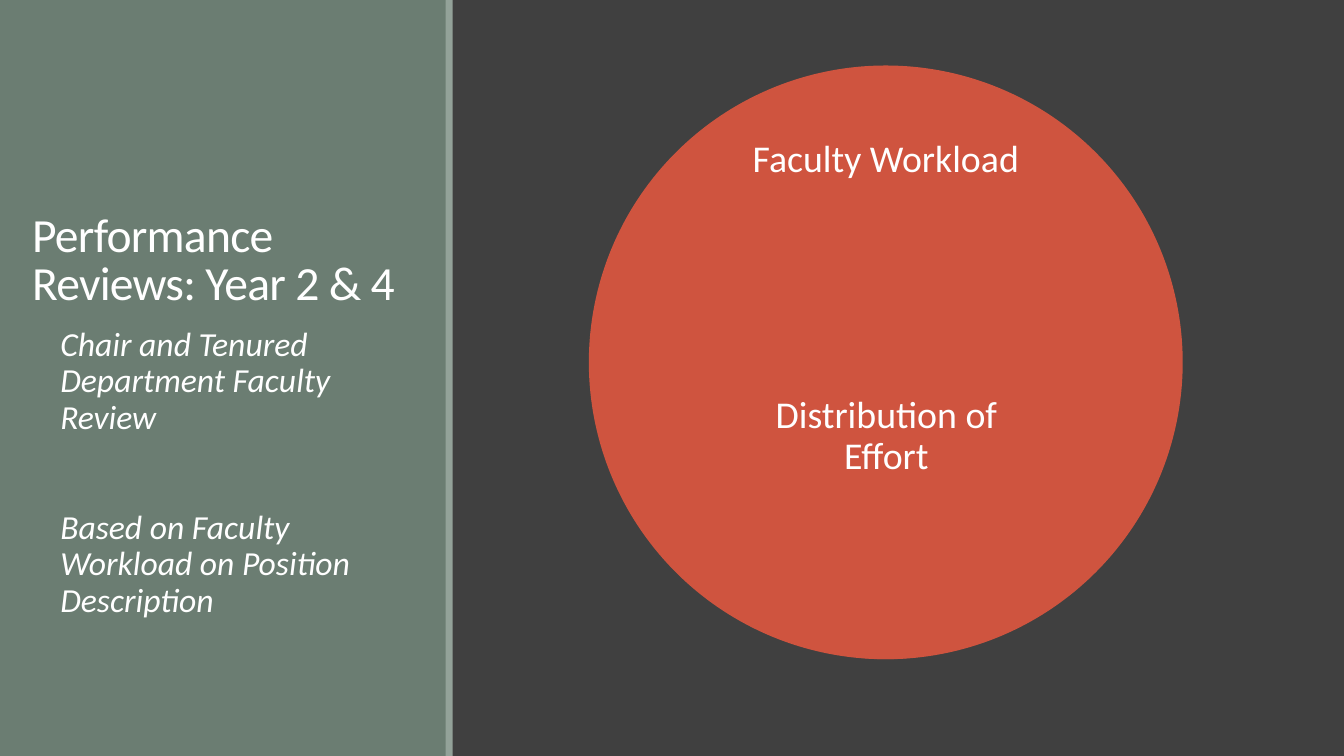
from pptx import Presentation
from pptx.dml.color import RGBColor
from pptx.enum import shapes, text
from pptx.util import Inches, Pt

FONT = "Calibri"
WHITE = "FFFFFF"
CORAL = "CF543F"
SLIDE_WIDTH, SLIDE_HEIGHT = 13.33, 7.5


def color(value):
    return RGBColor.from_string(value)


def add_block(slide, kind, box, fill):
    shape = slide.shapes.add_shape(kind, *map(Inches, box))
    shape.shadow.inherit = False
    shape.fill.solid()
    shape.fill.fore_color.rgb = color(fill)
    shape.line.fill.background()
    return shape


def add_text(slide, box, paragraphs, size, italic=False, align=text.PP_ALIGN.LEFT,
             anchor=text.MSO_ANCHOR.TOP, line_spacing=0.9, gap=0, inset=0.1,
             inset_top=0.05, tracking=0):
    shape = slide.shapes.add_textbox(*map(Inches, box))
    frame = shape.text_frame
    frame.word_wrap = True
    frame.vertical_anchor = anchor
    frame.margin_left = frame.margin_right = Inches(inset)
    frame.margin_top = frame.margin_bottom = Inches(inset_top)
    for index, content in enumerate(paragraphs):
        paragraph = frame.add_paragraph() if index else frame.paragraphs[0]
        paragraph.alignment = align
        paragraph.line_spacing = line_spacing
        paragraph.space_before = Pt(gap if index else 0)
        run = paragraph.add_run()
        run.text = content
        run.font.name = FONT
        run.font.size = Pt(size)
        run.font.italic = italic
        run.font.color.rgb = color(WHITE)
        if tracking:
            run._r.get_or_add_rPr().set("spc", str(int(tracking * 100)))
    return shape


def add_sidebar(slide, left, top, width, height):
    rectangle = shapes.MSO_SHAPE.RECTANGLE
    add_block(slide, rectangle, (left, top, width, height), "6B7D72")
    add_block(slide, rectangle, (left + width - 0.01, top, 0.07, height), "93A299")
    add_text(slide, (left + 0.22, top + 0.63, 3.94, 2.5),
             ["Performance Reviews: Year 2 & 4"], size=34,
             anchor=text.MSO_ANCHOR.BOTTOM, line_spacing=0.85, tracking=-0.5)
    add_text(slide, (left + 0.5, top + 3.2, 3.5, 3.7),
             ["Chair and Tenured Department Faculty Review",
              "Based on Faculty Workload on Position Description"],
             size=24, italic=True, gap=53)


def add_nested_circles(slide, left, top, diameter):
    inner = diameter * 0.75
    inner_left = left + (diameter - inner) / 2
    inner_top = top + diameter - inner
    circles = [
        ((left, top, diameter, diameter),
         (left + 1.4, top + 0.44, 3.09, 1), "Faculty Workload"),
        ((inner_left, inner_top, inner, inner),
         (inner_left + 0.65, inner_top + inner / 4, 3.13, inner / 2),
         "Distribution of Effort"),
    ]
    for circle, label_box, label in circles:
        add_block(slide, shapes.MSO_SHAPE.OVAL, circle, CORAL)
        add_text(slide, label_box, [label], size=27, align=text.PP_ALIGN.CENTER,
                 anchor=text.MSO_ANCHOR.MIDDLE, inset=0.21, inset_top=0.21)


def main():
    presentation = Presentation()
    presentation.slide_width = Inches(SLIDE_WIDTH)
    presentation.slide_height = Inches(SLIDE_HEIGHT)
    slide = presentation.slides.add_slide(presentation.slide_layouts[6])
    slide.background.fill.solid()
    slide.background.fill.fore_color.rgb = color("404040")
    add_sidebar(slide, 0, 0, 4.43, SLIDE_HEIGHT)
    add_nested_circles(slide, 5.84, 0.65, 5.89)
    presentation.save("out.pptx")


if __name__ == "__main__":
    main()
